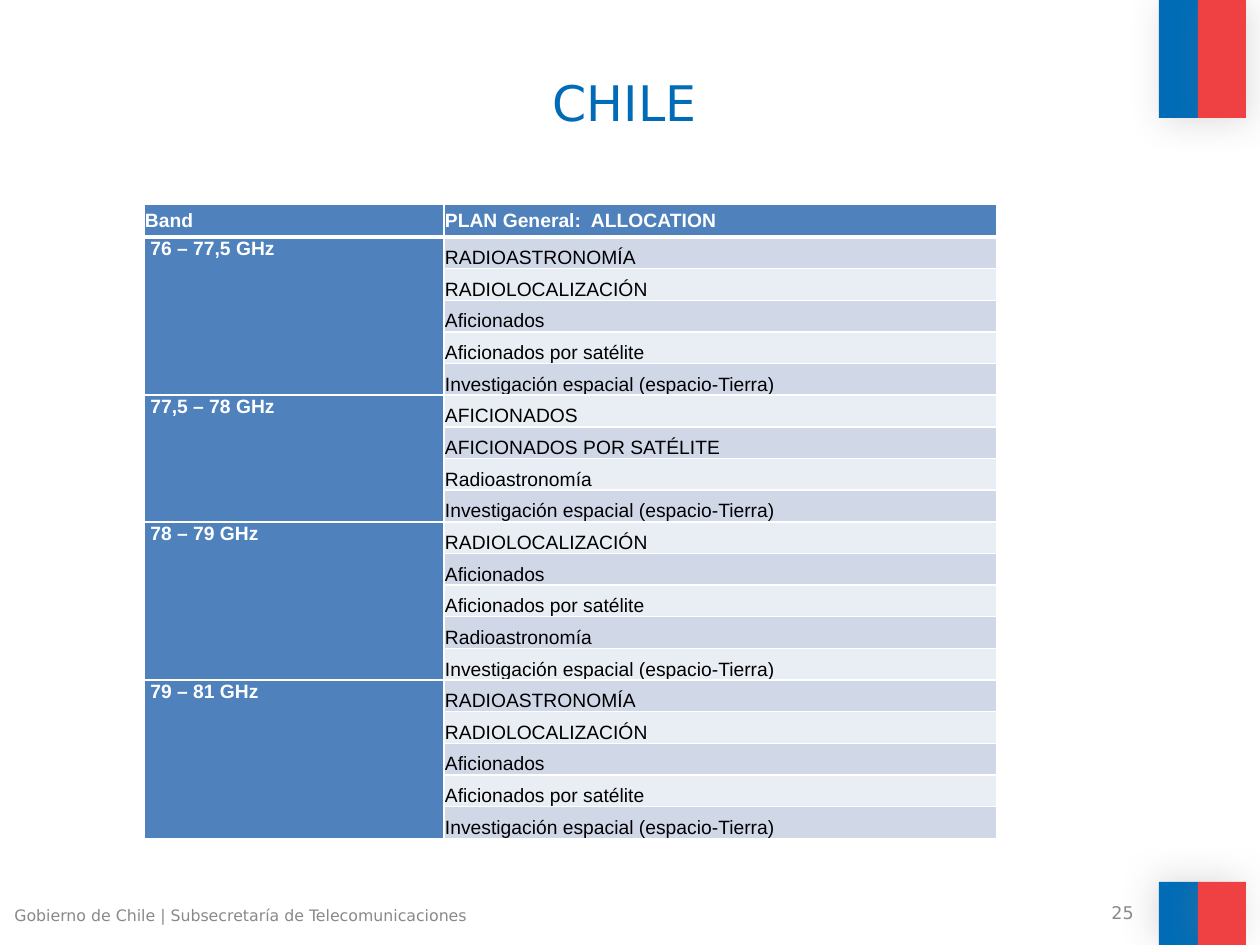
from lxml import etree
from pptx import Presentation
from pptx.dml.color import RGBColor
from pptx.enum.shapes import MSO_SHAPE
from pptx.enum.text import MSO_ANCHOR, PP_ALIGN
from pptx.oxml import parse_xml
from pptx.oxml.ns import nsdecls, qn
from pptx.util import Pt

TOP, MIDDLE, BOTTOM = MSO_ANCHOR.TOP, MSO_ANCHOR.MIDDLE, MSO_ANCHOR.BOTTOM
LEFT, CENTER, RIGHT = PP_ALIGN.LEFT, PP_ALIGN.CENTER, PP_ALIGN.RIGHT
RECTANGLE = MSO_SHAPE.RECTANGLE

EMU_PER_PX = 914400 / 126
BLUE, RED, GRAY = "006CB7", "EF4144", "898989"
WHITE, BLACK = "FFFFFF", "000000"
HEADER_FILL, BAND_FILLS = "4F81BD", ("D0D8E8", "E9EDF4")
SLIDE_FONT, TABLE_FONT = "DejaVu Sans", "Arial"

HEADINGS = ("Band", "PLAN General:  ALLOCATION")
SPACE_RESEARCH = "Investigación espacial (espacio-Tierra)"
ALLOCATIONS = [
    (" 76 – 77,5 GHz", ["RADIOASTRONOMÍA", "RADIOLOCALIZACIÓN", "Aficionados",
                        "Aficionados por satélite", SPACE_RESEARCH]),
    (" 77,5 – 78 GHz", ["AFICIONADOS", "AFICIONADOS POR SATÉLITE",
                        "Radioastronomía", SPACE_RESEARCH]),
    (" 78 – 79 GHz", ["RADIOLOCALIZACIÓN", "Aficionados", "Aficionados por satélite",
                      "Radioastronomía", SPACE_RESEARCH]),
    (" 79 – 81 GHz", ["RADIOASTRONOMÍA", "RADIOLOCALIZACIÓN", "Aficionados",
                      "Aficionados por satélite", SPACE_RESEARCH]),
]


def px(length):
    return round(length * EMU_PER_PX)


def color(hex_string):
    return RGBColor.from_string(hex_string)


def write(frame, text, size, hex_string, font=SLIDE_FONT, bold=False, align=LEFT):
    paragraph = frame.paragraphs[0]
    paragraph.text = text
    paragraph.alignment = align
    paragraph.font.name = font
    paragraph.font.size = Pt(size)
    paragraph.font.bold = bold
    paragraph.font.color.rgb = color(hex_string)


def add_flag(slide, left, top, height, shadow_angle):
    """Blue and red stripes side by side, each with a soft shadow."""
    for offset, width, fill in ((0, 39, BLUE), (39, 48, RED)):
        stripe = slide.shapes.add_shape(
            RECTANGLE, px(left + offset), px(top), px(width), px(height))
        stripe.fill.solid()
        stripe.fill.fore_color.rgb = color(fill)
        stripe.line.fill.background()
        stripe.shadow.inherit = False
        effects = stripe._element.spPr.find(qn("a:effectLst"))
        effects.append(parse_xml(
            f'<a:outerShdw {nsdecls("a")} blurRad="{Pt(20)}" dist="{Pt(3)}" '
            f'dir="{shadow_angle * 60000}" rotWithShape="0"><a:srgbClr val="808080">'
            '<a:alpha val="25000"/></a:srgbClr></a:outerShdw>'))


def add_title(slide, left, top, width, height):
    title = slide.shapes.title
    title.left, title.top, title.width, title.height = map(px, (left, top, width, height))
    title.text_frame.vertical_anchor = MIDDLE
    write(title.text_frame, "CHILE", 28, BLUE, align=CENTER)


def add_label(slide, box, text, size, anchor=TOP, align=LEFT):
    frame = slide.shapes.add_textbox(*map(px, box)).text_frame
    frame.word_wrap = True
    frame.vertical_anchor = anchor
    write(frame, text, size, GRAY, align=align)


def set_borders(cell, bottom_width):
    properties = cell._tc.get_or_add_tcPr()
    for index, (side, width) in enumerate(
            (("L", 1), ("R", 1), ("T", 1), ("B", bottom_width))):
        border = etree.Element(qn(f"a:ln{side}"), w=str(Pt(width)))
        fill = etree.SubElement(border, qn("a:solidFill"))
        etree.SubElement(fill, qn("a:srgbClr"), val=WHITE)
        properties.insert(index, border)


def style_cell(cell, text, fill, anchor, text_color=WHITE, bold=True, bottom_width=1):
    cell.margin_left = cell.margin_right = cell.margin_top = px(1)
    cell.margin_bottom = 0
    cell.vertical_anchor = anchor
    cell.fill.solid()
    cell.fill.fore_color.rgb = color(fill)
    set_borders(cell, bottom_width)
    write(cell.text_frame, text, 11, text_color, TABLE_FONT, bold)


def add_allocation_table(slide, left, top, width, height):
    header_height, band_width = 33, 300
    service_count = sum(len(services) for _, services in ALLOCATIONS)
    table = slide.shapes.add_table(
        service_count + 1, 2, px(left), px(top), px(width), px(height)).table
    table.columns[0].width = px(band_width)
    table.columns[1].width = px(width - band_width)
    for row in table.rows:
        row.height = px((height - header_height) / service_count)
    table.rows[0].height = px(header_height)

    # Header row
    for column, heading in enumerate(HEADINGS):
        style_cell(table.cell(0, column), heading, HEADER_FILL, MIDDLE, bottom_width=3)

    # One merged band cell beside its services
    row = 1
    for band, services in ALLOCATIONS:
        first_row = row
        for service in services:
            style_cell(table.cell(row, 0), band if row == first_row else "",
                       HEADER_FILL, TOP)
            style_cell(table.cell(row, 1), service, BAND_FILLS[(row - 1) % 2],
                       BOTTOM, BLACK, bold=False)
            row += 1
        table.cell(first_row, 0).merge(table.cell(row - 1, 0))


def main():
    presentation = Presentation()
    presentation.slide_width, presentation.slide_height = px(1260), px(945)
    slide = presentation.slides.add_slide(presentation.slide_layouts[5])

    # Flags at the right edge
    add_flag(slide, 1159, 0, 118, shadow_angle=45)
    add_flag(slide, 1159, 882, 63, shadow_angle=215)

    # Title and table
    add_title(slide, 113, 38, 1023, 127)
    add_allocation_table(slide, 144, 204, 853, 635)

    # Footer and page number
    add_label(slide, (852, 900, 294, 26), "25", 10, MIDDLE, RIGHT)
    add_label(slide, (2, 900, 578, 45),
              "Gobierno de Chile | Subsecretaría de Telecomunicaciones", 9)

    presentation.save("out.pptx")


if __name__ == "__main__":
    main()
